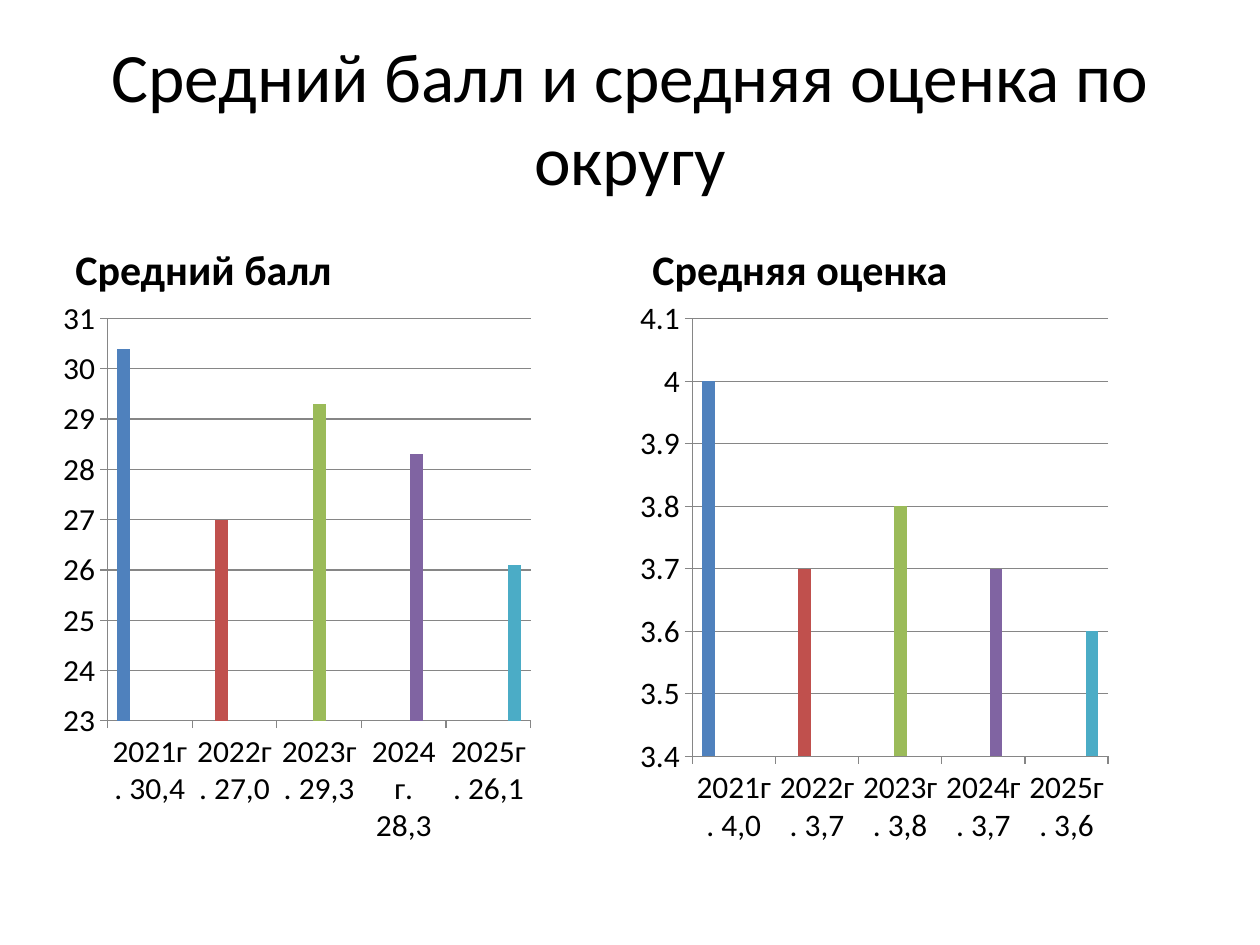
from dataclasses import dataclass

from lxml import etree
from pptx import Presentation
from pptx.chart.data import CategoryChartData
from pptx.dml.color import RGBColor
from pptx.enum.chart import XL_CHART_TYPE, XL_TICK_MARK
from pptx.enum.text import MSO_ANCHOR, PP_ALIGN
from pptx.oxml.ns import qn
from pptx.util import Inches, Pt

COLUMNS = XL_CHART_TYPE.COLUMN_CLUSTERED
TICK_OUT = XL_TICK_MARK.OUTSIDE
MIDDLE, BOTTOM = MSO_ANCHOR.MIDDLE, MSO_ANCHOR.BOTTOM
LEFT, CENTER = PP_ALIGN.LEFT, PP_ALIGN.CENTER


@dataclass(frozen=True)
class Theme:
    font: str = "Calibri"
    text: str = "000000"
    axis: str = "868686"
    bars: tuple = ("4F81BD", "C0504D", "9BBB59", "8064A2", "4BACC6")
    title_size: float = 39.6
    heading_size: float = 24
    chart_size: float = 18
    line_width: float = 0.75


class SlideBuilder:
    def __init__(self, slide, theme):
        self.slide = slide
        self.theme = theme

    def set_font(self, font, size, bold=False):
        font.name = self.theme.font
        font.size = Pt(size)
        font.bold = bold
        font.color.rgb = RGBColor.from_string(self.theme.text)

    def set_line(self, line):
        line.color.rgb = RGBColor.from_string(self.theme.axis)
        line.width = Pt(self.theme.line_width)

    def text(self, text, x, y, w, h, size, bold=False, align=LEFT, anchor=BOTTOM):
        box = self.slide.shapes.add_textbox(Inches(x), Inches(y), Inches(w), Inches(h))
        tf = box.text_frame
        tf.word_wrap = True
        tf.vertical_anchor = anchor
        p = tf.paragraphs[0]
        p.text = text
        p.alignment = align
        self.set_font(p.font, size, bold)

    def column_chart(self, values, x, y, w, h, scale, plot_area):
        """Draw one coloured series per year, each with a single column."""
        data = CategoryChartData()
        data.categories = list(values)
        for i, value in enumerate(values.values()):
            row = [None] * len(values)
            row[i] = value
            data.add_series(f"Series {i + 1}", row)
        chart = self.slide.shapes.add_chart(
            COLUMNS, Inches(x), Inches(y), Inches(w), Inches(h), data).chart
        chart.has_legend = False
        chart.has_title = False
        self.set_font(chart.font, self.theme.chart_size)

        plot = chart.plots[0]
        plot.gap_width = 150
        plot.overlap = 0
        plot.vary_by_categories = False
        for series, color in zip(plot.series, self.theme.bars):
            series.format.fill.solid()
            series.format.fill.fore_color.rgb = RGBColor.from_string(color)

        for axis in (chart.category_axis, chart.value_axis):
            axis.major_tick_mark = TICK_OUT
            self.set_line(axis.format.line)
        axis = chart.value_axis
        axis.minimum_scale, axis.maximum_scale, axis.major_unit = scale
        axis.has_major_gridlines = True
        self.set_line(axis.major_gridlines.format.line)
        axis.tick_labels.number_format = "General"
        axis.tick_labels.number_format_is_linked = False
        self.place_plot(chart, plot_area)

    def place_plot(self, chart, plot_area):
        """Fix the inner plot area as fractions of the chart."""
        area = chart.plots[0]._element.getparent()
        layout = area.find(qn("c:layout"))
        if layout is None:
            layout = etree.Element(qn("c:layout"))
            area.insert(0, layout)
        manual = etree.SubElement(layout, qn("c:manualLayout"))
        settings = [("layoutTarget", "inner"), ("xMode", "edge"), ("yMode", "edge")]
        settings += zip("xywh", plot_area)
        for tag, value in settings:
            etree.SubElement(manual, qn(f"c:{tag}")).set("val", str(value))


def main():
    prs = Presentation()
    prs.slide_width, prs.slide_height = Inches(10), Inches(7.5)
    theme = Theme()
    s = SlideBuilder(prs.slides.add_slide(prs.slide_layouts[6]), theme)

    # Title
    s.text("Средний балл и средняя оценка по округу", 0.5, 0.3, 9, 1.25,
           theme.title_size, align=CENTER, anchor=MIDDLE)

    # Two columns: heading above chart
    scores = {"2021г. 30,4": 30.4, "2022г. 27,0": 27.0, "2023г. 29,3": 29.3,
              "2024 г. 28,3": 28.3, "2025г. 26,1": 26.1}
    grades = {"2021г. 4,0": 4.0, "2022г. 3,7": 3.7, "2023г. 3,8": 3.8,
              "2024г. 3,7": 3.7, "2025г. 3,6": 3.6}
    columns = [
        (0.5, "Средний балл", scores, (23, 31, 1), (0.08, 0.03, 0.76, 0.76)),
        (5.08, "Средняя оценка", grades, (3.4, 4.1, 0.1), (0.09, 0.03, 0.75, 0.81)),
    ]
    width = 4.42
    for x, heading, values, scale, plot_area in columns:
        s.text(heading, x, 1.68, width, 0.7, theme.heading_size, bold=True)
        s.column_chart(values, x, 2.38, width, 4.32, scale, plot_area)

    prs.save("out.pptx")


if __name__ == "__main__":
    main()
